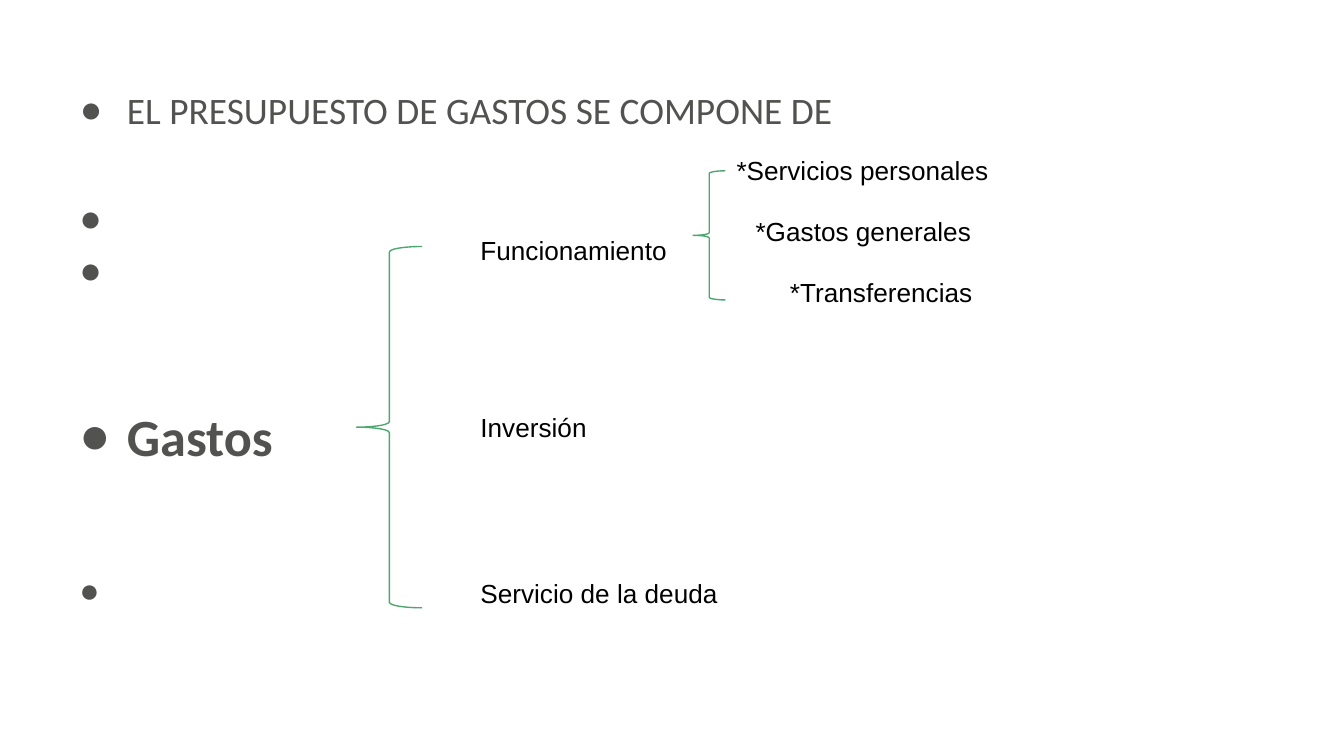
from typing import NamedTuple

from lxml import etree
from pptx import Presentation
from pptx import util as u
from pptx.dml.color import RGBColor
from pptx.enum import shapes, text
from pptx.oxml import ns

GREY = RGBColor(0x52, 0x52, 0x50)
GREEN = RGBColor(0x4E, 0xA7, 0x6F)
BLACK = RGBColor(0, 0, 0)


class Label(NamedTuple):
    wording: str
    left: float
    top: float
    width: float


class Brace(NamedTuple):
    left: float
    top: float
    width: float
    height: float


class Mark(NamedTuple):
    top: float
    size: int


class Point(NamedTuple):
    wording: str
    size: int
    bold: bool
    space_before: int


BULLET = "●"
BULLET_FONT = "Arial"
LABEL_HEIGHT = 0.86
LABEL_LEFT = 8.83
MARK_LEFT = 1.5
MARK_SIDE = 0.8

POINTS = [
    Point("EL PRESUPUESTO DE GASTOS SE COMPONE DE", 20, False, 0),
    Point("Gastos", 28, True, 141),
]
EXPENSES = [
    Label("Funcionamiento", LABEL_LEFT, 4.31, 5.21),
    Label("Inversión", LABEL_LEFT, 7.65, 3.63),
    Label("Servicio de la deuda", LABEL_LEFT, 10.78, 6.25),
]
OPERATING_COSTS = [
    Label("*Servicios personales", 13.67, 2.79, 6.43),
    Label("*Gastos generales", 14.03, 3.94, 4.65),
    Label("*Transferencias", 14.68, 5.1, 4.42),
]
BRACES = [Brace(6.74, 4.66, 1.24, 6.83), Brace(13.1, 3.23, 0.61, 2.44)]
MARKS = [Mark(3.67, 20), Mark(4.65, 20), Mark(10.76, 18)]


def add_bullet(paragraph) -> None:
    properties = paragraph._p.get_or_add_pPr()
    properties.set("marL", str(u.Cm(1.27)))
    properties.set("indent", str(-u.Cm(0.89)))
    colour = etree.SubElement(properties, ns.qn("a:buClr"))
    etree.SubElement(colour, ns.qn("a:srgbClr"), val=str(GREY))
    etree.SubElement(properties, ns.qn("a:buFont"), typeface=BULLET_FONT)
    etree.SubElement(properties, ns.qn("a:buChar"), char=BULLET)


def set_font(paragraph, name: str, size: int, colour: RGBColor, bold: bool = False) -> None:
    font = paragraph.font
    font.name, font.size, font.bold = name, u.Pt(size), bold
    font.color.rgb = colour


def fill_body(body, points: list[Point]) -> None:
    body.left, body.top = u.Cm(0.88), u.Cm(1.27)
    body.width, body.height = u.Cm(23.88), u.Cm(11.43)
    frame = body.text_frame
    frame.auto_size = text.MSO_AUTO_SIZE.NONE
    frame.vertical_anchor = text.MSO_ANCHOR.TOP
    frame.margin_left = frame.margin_right = u.Cm(0.25)
    frame.margin_top = frame.margin_bottom = u.Cm(0.25)
    frame.text = "\n".join(point.wording for point in points)
    for paragraph, point in zip(frame.paragraphs, points):
        paragraph.line_spacing = 1.15
        paragraph.space_before = u.Pt(point.space_before)
        add_bullet(paragraph)
        set_font(paragraph, "Calibri", point.size, GREY, point.bold)


def draw_label(slide, label: Label) -> None:
    box = slide.shapes.add_textbox(
        u.Cm(label.left), u.Cm(label.top), u.Cm(label.width), u.Cm(LABEL_HEIGHT))
    frame = box.text_frame
    frame.word_wrap = True
    frame.auto_size = text.MSO_AUTO_SIZE.SHAPE_TO_FIT_TEXT
    frame.text = label.wording
    set_font(frame.paragraphs[0], "Arial", 14, BLACK)


def draw_brace(slide, brace: Brace) -> None:
    outline = slide.shapes.add_shape(
        shapes.MSO_SHAPE.LEFT_BRACE, *(u.Cm(length) for length in brace))
    outline.shadow.inherit = False
    outline.fill.background()
    outline.line.color.rgb = GREEN
    outline.line.width = u.Pt(0.75)


def draw_mark(slide, mark: Mark) -> None:
    """Draw a list mark that stands without wording."""
    box = slide.shapes.add_textbox(
        u.Cm(MARK_LEFT), u.Cm(mark.top), u.Cm(MARK_SIDE), u.Cm(MARK_SIDE))
    frame = box.text_frame
    frame.margin_left = frame.margin_right = 0
    frame.margin_top = frame.margin_bottom = 0
    frame.word_wrap = True
    frame.text = BULLET
    set_font(frame.paragraphs[0], BULLET_FONT, mark.size, GREY)


def main() -> None:
    deck = Presentation()
    deck.slide_width, deck.slide_height = u.Cm(25.4), u.Cm(14.29)
    slide = deck.slides.add_slide(deck.slide_layouts[1])
    unused_title = slide.shapes.title.element
    unused_title.getparent().remove(unused_title)

    fill_body(slide.placeholders[1], POINTS)
    for mark in MARKS:
        draw_mark(slide, mark)
    for brace in BRACES:
        draw_brace(slide, brace)
    for label in EXPENSES + OPERATING_COSTS:
        draw_label(slide, label)

    deck.save("out.pptx")


if __name__ == "__main__":
    main()
